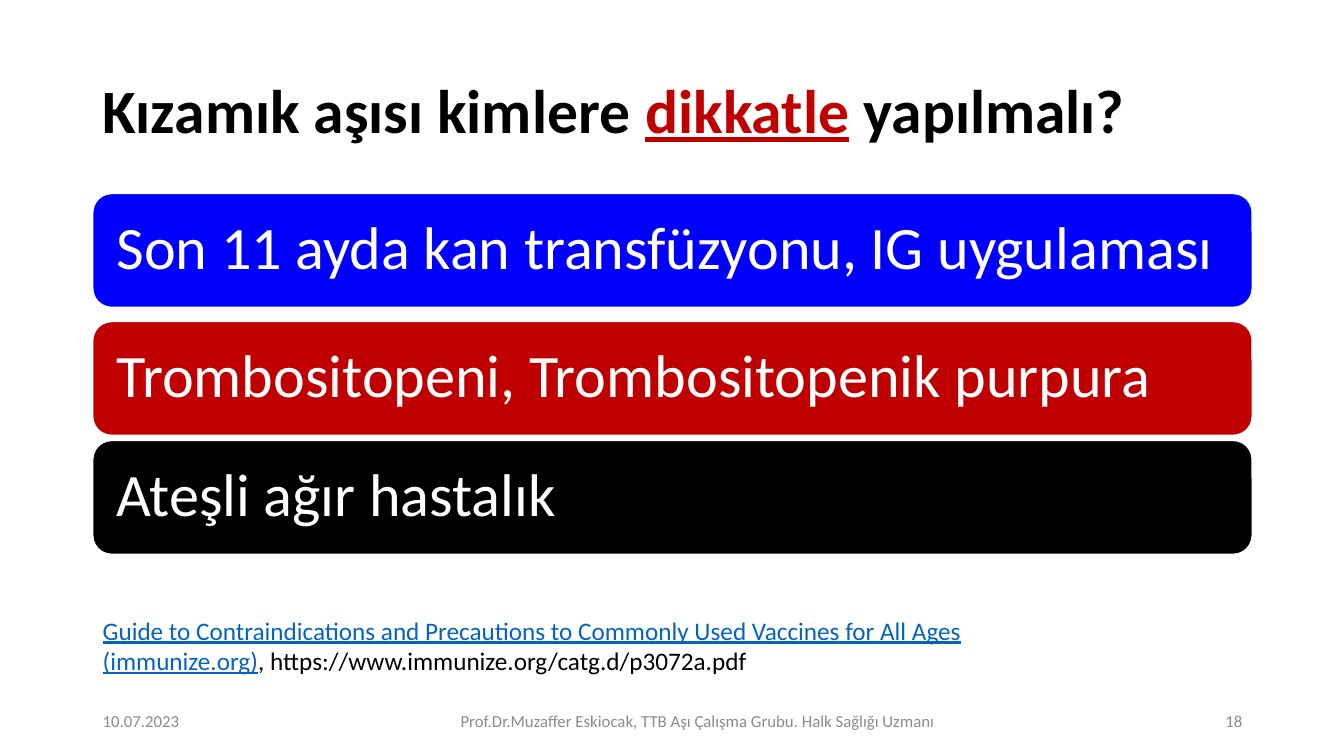
"""Build the slide on who should receive the measles vaccine with care."""
from pptx import Presentation
from pptx.dml.color import RGBColor
from pptx.enum.shapes import MSO_SHAPE
from pptx.enum.text import MSO_ANCHOR, MSO_AUTO_SIZE, PP_ALIGN
from pptx.util import Inches, Pt

ROUNDED = MSO_SHAPE.ROUNDED_RECTANGLE
TOP, MIDDLE = MSO_ANCHOR.TOP, MSO_ANCHOR.MIDDLE
LEFT, CENTER, RIGHT = PP_ALIGN.LEFT, PP_ALIGN.CENTER, PP_ALIGN.RIGHT
NO_AUTOFIT = MSO_AUTO_SIZE.NONE

COLORS = {
    "blue": "0000FF", "red": "C00000", "black": "000000",
    "white": "FFFFFF", "gray": "8C8C8C", "link": "0563C1",
}
TITLE = [
    ("Kızamık aşısı kimlere ", "black", {"bold": True}),
    ("dikkatle", "red", {"bold": True, "underline": True}),
    (" yapılmalı?", "black", {"bold": True}),
]
PRECAUTIONS = [
    ("Son 11 ayda kan transfüzyonu, IG uygulaması", "blue", 1.92),
    ("Trombositopeni, Trombositopenik purpura", "red", 3.19),
    ("Ateşli ağır hastalık", "black", 4.37),
]
SOURCE = [
    ("Guide to Contraindications and Precautions to Commonly Used Vaccines "
     "for All Ages (immunize.org)", "link", {"underline": True}),
    (", https://www.immunize.org/catg.d/p3072a.pdf", "black", {}),
]
FOOTERS = [
    ("10.07.2023", 0.92, 3, LEFT),
    ("Prof.Dr.Muzaffer Eskiocak, TTB Aşı Çalışma Grubu. Halk Sağlığı Uzmanı",
     4.42, 5, CENTER),
    ("18", 9.42, 3, RIGHT),
]
MARGIN, CONTENT_WIDTH, BAR_HEIGHT, BAR_INSET = 0.92, 11.5, 1.13, 0.18


def color(name):
    return RGBColor.from_string(COLORS[name])


def write(shape, runs, size, anchor=MIDDLE, alignment=LEFT, spacing=1.0):
    frame = shape.text_frame
    frame.word_wrap = True
    frame.auto_size = NO_AUTOFIT
    frame.vertical_anchor = anchor
    paragraph = frame.paragraphs[0]
    paragraph.alignment = alignment
    paragraph.line_spacing = spacing
    for text, color_name, extras in runs:
        run = paragraph.add_run()
        run.text = text
        run.font.color.rgb = color(color_name)
        for name, value in {"name": "Calibri", "size": Pt(size), **extras}.items():
            setattr(run.font, name, value)


def add_bar(slide, text, fill, top):
    bar = slide.shapes.add_shape(
        ROUNDED, Inches(MARGIN), Inches(top), Inches(CONTENT_WIDTH), Inches(BAR_HEIGHT))
    bar.shadow.inherit = False
    bar.fill.solid()
    bar.fill.fore_color.rgb = color(fill)
    bar.line.color.rgb = color("white")
    bar.line.width = Pt(1)
    for side in ("left", "top", "right", "bottom"):
        setattr(bar.text_frame, f"margin_{side}", Inches(BAR_INSET))
    write(bar, [(text, "white", {})], 43, spacing=0.9)


def main():
    presentation = Presentation()
    presentation.slide_width, presentation.slide_height = Inches(13.33), Inches(7.5)
    slide = presentation.slides.add_slide(presentation.slide_layouts.get_by_name("Title Only"))

    title = slide.shapes.title
    title_box = {"left": MARGIN, "top": 0.4, "width": CONTENT_WIDTH, "height": 1.45}
    for name, value in title_box.items():
        setattr(title, name, Inches(value))
    write(title, TITLE, 44, spacing=0.9)

    for text, fill, top in PRECAUTIONS:
        add_bar(slide, text, fill, top)

    source = slide.shapes.add_textbox(
        Inches(MARGIN), Inches(6.05), Inches(10.3), Inches(0.71))
    write(source, SOURCE, 18, anchor=TOP)

    for text, left, width, alignment in FOOTERS:
        footer = slide.shapes.add_textbox(
            Inches(left), Inches(6.95), Inches(width), Inches(0.4))
        write(footer, [(text, "gray", {})], 12, alignment=alignment)

    presentation.save("out.pptx")


if __name__ == "__main__":
    main()
